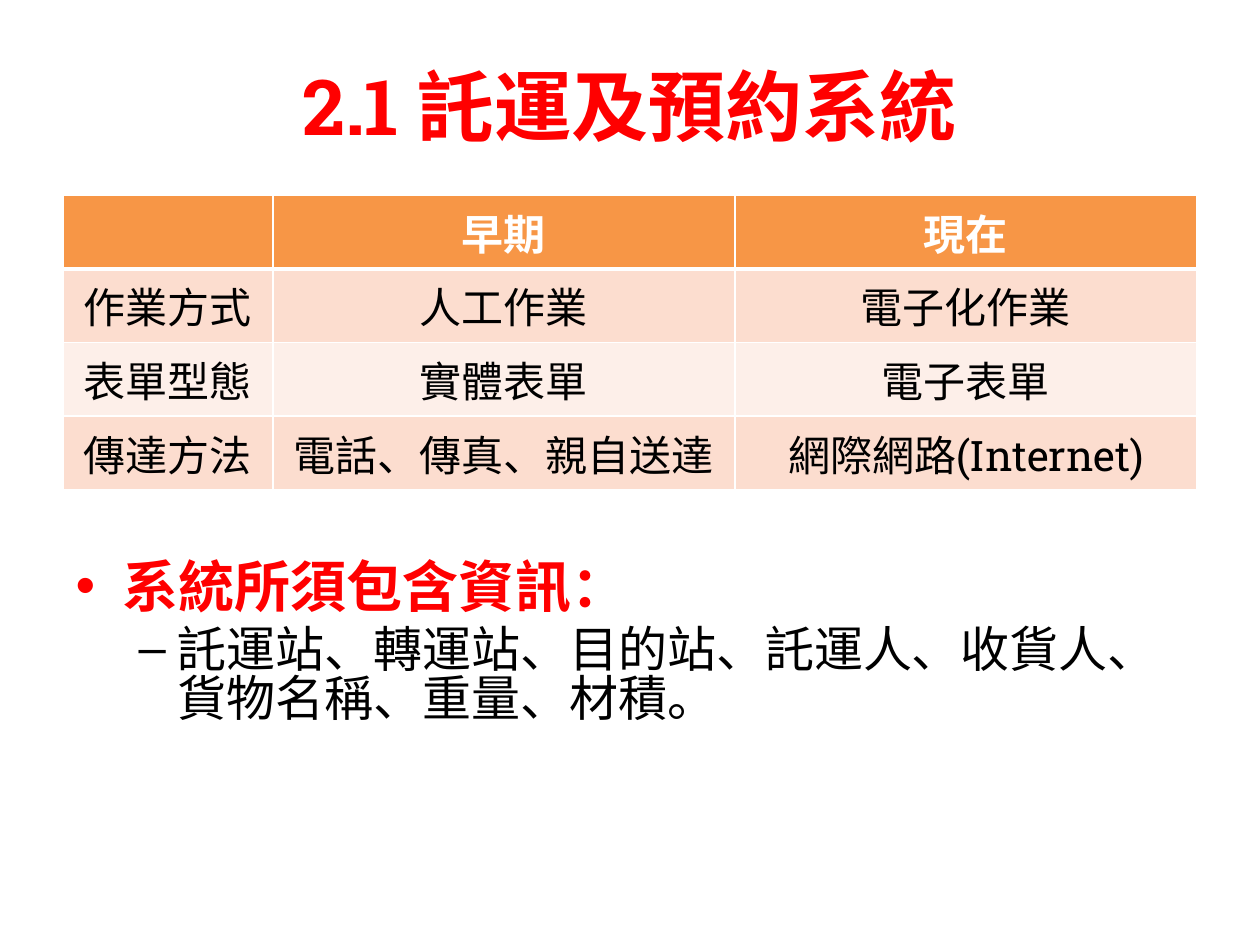
from pptx import Presentation
from pptx.dml.color import RGBColor
from pptx.enum.text import MSO_ANCHOR as Anchor, MSO_AUTO_SIZE as AutoSize, PP_ALIGN as Align
from pptx.oxml import parse_xml
from pptx.oxml.ns import nsdecls
from pptx.util import Pt

RED, WHITE, BLACK = "FF0000", "FFFFFF", "000000"
HEADER, BANDS = "F79646", ("FDEFE9", "FCDDCF")


def color(value):
    return RGBColor.from_string(value)


class Deck:
    font = "Roboto Slab"

    def __init__(self, width, height):
        self.prs = Presentation()
        self.prs.slide_width, self.prs.slide_height = Pt(width), Pt(height)
        self.s = self.prs.slides.add_slide(self.prs.slide_layouts[1])

    def place(self, sp, left, top, width, height):
        box = dict(left=left, top=top, width=width, height=height)
        for name, value in box.items():
            setattr(sp, name, Pt(value))

    def add_text(self, p, text, size, fill, bold=False):
        r = p.add_run()
        r.text = text
        style = dict(name=self.font, size=Pt(size), bold=bold)
        for name, value in style.items():
            setattr(r.font, name, value)
        r.font.color.rgb = color(fill)

    def title(self, text, box):
        sp = self.s.shapes.title
        self.place(sp, *box)
        tf = sp.text_frame
        tf.auto_size = AutoSize.NONE
        tf.vertical_anchor = Anchor.MIDDLE
        p = tf.paragraphs[0]
        p.alignment = Align.CENTER
        self.add_text(p, text, 44, RED, True)

    def bullets(self, items, box):
        sp = self.s.placeholders[1]
        self.place(sp, *box)
        tf = sp.text_frame
        tf.auto_size = AutoSize.NONE
        for i, (level, text, size, fill, bold) in enumerate(items):
            p = tf.add_paragraph() if i else tf.paragraphs[0]
            p.level = level
            p.line_spacing = 0.83
            if not i:
                p.space_before = Pt(0)
            self.add_text(p, text, size, fill, bold)

    def borders(self, cell, **widths):
        tc_pr = cell._tc.get_or_add_tcPr()
        for i, side in enumerate("LRTB"):
            tc_pr.insert(i, parse_xml(
                f'<a:ln{side} {nsdecls("a")} w="{Pt(widths.get(side, 1))}">'
                f'<a:solidFill><a:srgbClr val="{WHITE}"/></a:solidFill></a:ln{side}>'))

    def table(self, rows, widths, row_height, left, top):
        table = self.s.shapes.add_table(
            len(rows), len(widths), Pt(left), Pt(top),
            Pt(sum(widths)), Pt(row_height * len(rows))).table
        for column, width in zip(table.columns, widths):
            column.width = Pt(width)
        for i, row in enumerate(rows):
            for j, text in enumerate(row):
                cell = table.cell(i, j)
                cell.vertical_anchor = Anchor.MIDDLE
                cell.fill.solid()
                cell.fill.fore_color.rgb = color(BANDS[i % 2] if i else HEADER)
                self.borders(cell, T=3 if i == 1 else 1, B=1 if i else 3)
                if text:
                    p = cell.text_frame.paragraphs[0]
                    p.alignment = Align.CENTER
                    self.add_text(p, text, 24, BLACK if i else WHITE, not i)


def main():
    deck = Deck(720, 540)
    deck.title("2.1 託運及預約系統", (36, 15, 648, 90))
    deck.table([
        ("", "早期", "現在"),
        ("作業方式", "人工作業", "電子化作業"),
        ("表單型態", "實體表單", "電子表單"),
        ("傳達方法", "電話、傳真、親自送達", "網際網路(Internet)"),
    ], (120, 264, 264), 36, 36, 111.6)
    deck.bullets([
        (0, "系統所須包含資訊：", 32, RED, True),
        (1, "託運站、轉運站、目的站、託運人、收貨人、貨物名稱、重量、材積。", 28, BLACK, False),
    ], (36, 318, 648, 149))
    deck.prs.save("out.pptx")


if __name__ == "__main__":
    main()
